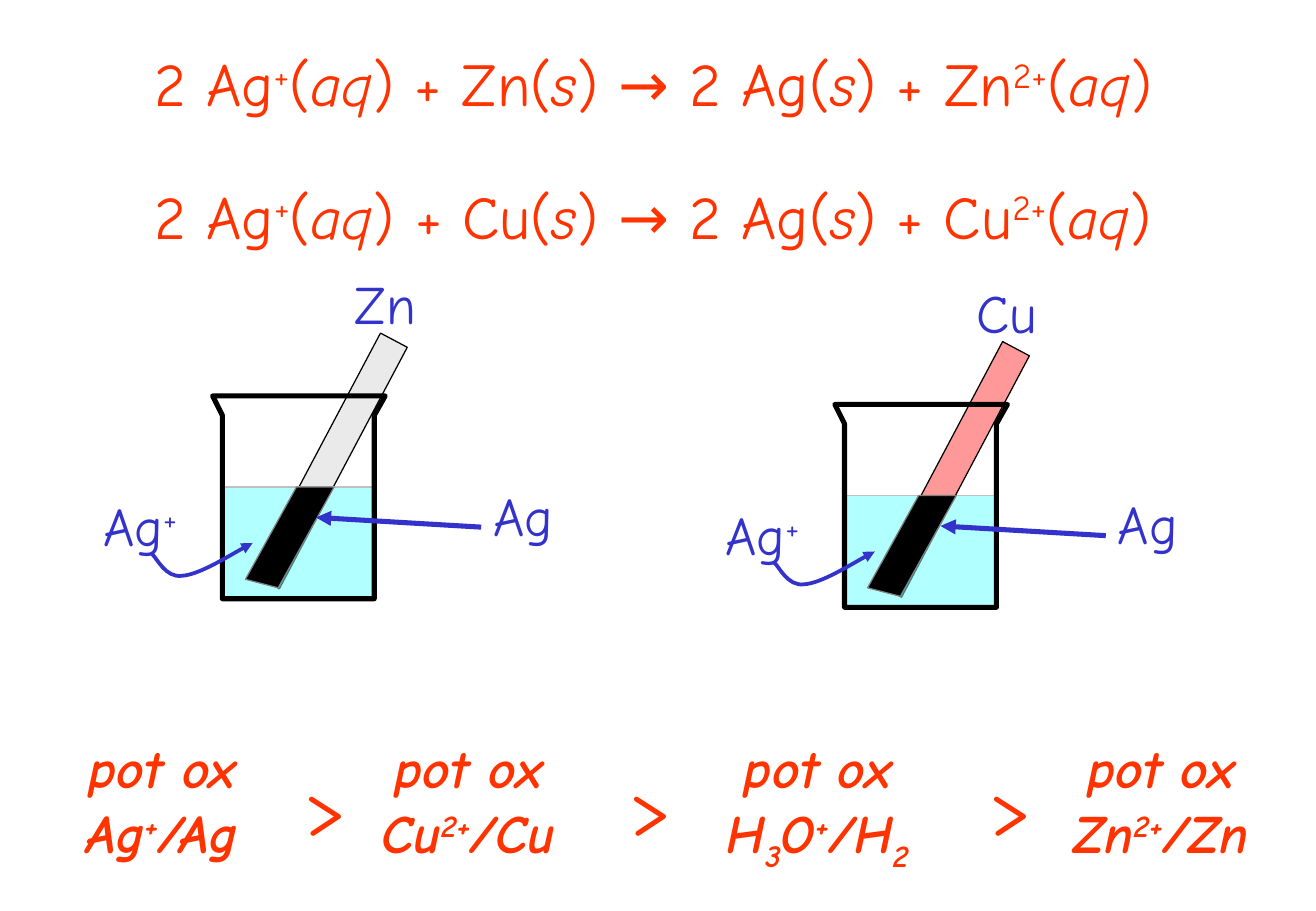
from dataclasses import dataclass

from pptx import Presentation
from pptx.dml.color import RGBColor
from pptx.enum.shapes import MSO_CONNECTOR as Connector, MSO_SHAPE as Preset
from pptx.enum.text import MSO_ANCHOR as Anchor, MSO_AUTO_SIZE as AutoSize, PP_ALIGN as Align
from pptx.oxml.ns import qn
from pptx.util import Emu, Pt
from lxml.etree import SubElement

EMU_PER_PX = 9144  # 100 px to the inch


@dataclass(frozen=True)
class Theme:
    font: str = "Comic Neue"
    equation: str = "FF3300"
    label: str = "3333CC"
    water: str = "66FFFF"
    water_edge: str = "C0C0C0"
    outline: str = "000000"
    silver: str = "000000"
    silver_edge: str = "808080"
    zinc: str = "EAEAEA"
    copper: str = "FF9999"
    equation_size: int = 36
    label_size: int = 32
    sign_size: int = 48


def px(value):
    return Emu(round(value * EMU_PER_PX))


def write(frame, text, *, font, size, color, bold=False, italic=False,
          align=Align.LEFT, wrap=False):
    """Fill a frame: '|' parts runs; '^' raises, '_' lowers, '~' slants a run."""
    frame.word_wrap = wrap
    frame.auto_size = AutoSize.SHAPE_TO_FIT_TEXT
    frame.vertical_anchor = Anchor.TOP
    for index, line in enumerate(text.split("\n")):
        paragraph = frame.add_paragraph() if index else frame.paragraphs[0]
        paragraph.alignment = align
        for part in line.split("|"):
            mark = part[0] if part[0] in "^_~" else ""
            run = paragraph.add_run()
            run.text = part[len(mark):]
            run.font.name = font
            run.font.size = Pt(size)
            run.font.color.rgb = RGBColor.from_string(color)
            run.font.bold = bold
            run.font.italic = italic or mark == "~"
            if mark in ("^", "_"):
                run.font._element.set("baseline", "30000" if mark == "^" else "-25000")


class SlideBuilder:
    def __init__(self, presentation, theme):
        self.theme = theme
        self.slide = presentation.slides.add_slide(presentation.slide_layouts[5])
        self.shapes = self.slide.shapes

    def title(self, text, left, top, width, height, **style):
        shape = self.shapes.title
        shape.left, shape.top, shape.width, shape.height = map(px, (left, top, width, height))
        write(shape.text_frame, text, font=self.theme.font, **style)

    def text(self, text, left, top, width, height, **style):
        shape = self.shapes.add_textbox(*map(px, (left, top, width, height)))
        write(shape.text_frame, text, font=self.theme.font, **style)

    def label(self, text, left, top, width):
        self.text(text, left, top, width, 63,
                  size=self.theme.label_size, color=self.theme.label)

    def paint(self, shape, fill, line, weight, alpha=None):
        shape.shadow.inherit = False
        if fill:
            shape.fill.solid()
            shape.fill.fore_color.rgb = RGBColor.from_string(fill)
        else:
            shape.fill.background()
        if alpha:
            color = shape._element.spPr.find(qn("a:solidFill"))[0]
            SubElement(color, qn("a:alpha"), val=str(alpha * 1000))
        self.stroke(shape, line, weight)

    def stroke(self, shape, color, weight, arrow=False):
        shape.line.color.rgb = RGBColor.from_string(color)
        shape.line.width = Pt(weight)
        if arrow:
            SubElement(shape.line._get_or_add_ln(), qn("a:tailEnd"), type="triangle")

    def rectangle(self, left, top, width, height, fill, line, rotation=0, alpha=None):
        shape = self.shapes.add_shape(Preset.RECTANGLE, *map(px, (left, top, width, height)))
        shape.rotation = rotation
        self.paint(shape, fill, line, 0.75, alpha)

    def outline(self, points, fill, line, weight, close=True):
        (left, top), *rest = points
        builder = self.shapes.build_freeform(left, top, scale=EMU_PER_PX)
        builder.add_line_segments(rest, close=close)
        shape = builder.convert_to_shape()
        self.paint(shape, fill, line, weight)
        return shape

    def curved_arrow(self, points, color, weight):
        """Draw cubic curves: a start, then three points for each curve."""
        shape = self.outline(points, None, color, weight, close=False)
        segments = shape._element.xpath(".//a:lnTo")
        for first in range(0, len(segments), 3):
            curve = SubElement(segments[first].getparent(), qn("a:cubicBezTo"))
            for segment in segments[first:first + 3]:
                curve.append(segment[0])
                segment.getparent().remove(segment)
        self.stroke(shape, color, weight, arrow=True)

    def arrow(self, start, end, color, weight):
        connector = self.shapes.add_connector(Connector.STRAIGHT, *map(px, (*start, *end)))
        self.stroke(connector, color, weight, arrow=True)
        SubElement(connector._element.spPr, qn("a:effectLst"))

    def beaker(self, metal, metal_fill, left, top, silver_left):
        """Draw a beaker whose rim starts at left, top, with its metal strip."""
        theme = self.theme

        def place(points):
            return [(left + x, top + y) for x, y in points]

        # Metal strip and its name
        self.rectangle(left + 84, top - 59, 25, 225, metal_fill, theme.outline, rotation=27.9)
        self.label(metal, left + 107, top - 108, 72)
        # Water and glass
        self.rectangle(left + 8, top + 75, 125, 92, theme.water, theme.water_edge, alpha=50)
        glass = [(0, 0), (8, 16), (8, 167), (133, 167), (133, 16), (142, 0)]
        self.outline(place(glass), None, theme.outline, 3)
        # Silver ions in the water
        self.label("Ag|^+", left - 100, top + 75, 90)
        curve = [(-50, 130), (-46, 133), (-39, 150), (-25, 148),
                 (-11, 147), (21, 127), (33, 121)]
        self.curved_arrow(place(curve), theme.label, 2.25)
        # Silver deposit on the strip
        deposit = [(69, 75), (100, 75), (54, 158), (27, 151)]
        self.outline(place(deposit), theme.silver, theme.silver_edge, 0.75)
        self.label("Ag", silver_left, top + 66, 76)
        self.arrow((silver_left, top + 108), (silver_left - 136, top + 100), theme.label, 3)


def main():
    theme = Theme()
    presentation = Presentation()
    presentation.slide_width, presentation.slide_height = px(1083), px(750)
    builder = SlideBuilder(presentation, theme)

    # Reaction equations
    equation = "2 Ag|^+|(|~aq|) + {0}(|~s|) → 2 Ag(|~s|) + {0}|^2+|(|~aq|)"
    style = dict(size=theme.equation_size, color=theme.equation, align=Align.CENTER, wrap=True)
    builder.title(equation.format("Zn"), 36, 33, 1003, 70, **style)
    builder.text(equation.format("Cu"), 36, 142, 1003, 70, **style)

    # Beakers
    builder.beaker("Zn", theme.zinc, 175, 326, silver_left=396)
    builder.beaker("Cu", theme.copper, 687, 333, silver_left=910)

    # Order of the oxidation potentials
    couples = [("Ag|^+|/Ag", 27, 213), ("Cu|^2+|/Cu", 296, 179),
               ("H|_3|O|^+|/H|_2", 573, 200), ("Zn|^2+|/Zn", 862, 187)]
    for couple, left, width in couples:
        builder.text("pot ox\n" + couple, left, 600, width, 117, size=theme.label_size,
                     color=theme.equation, bold=True, italic=True, align=Align.CENTER)
    for left in (240, 507, 804):
        builder.text(">", left, 617, 46, 90, size=theme.sign_size, color=theme.equation)

    presentation.save("out.pptx")


if __name__ == "__main__":
    main()
